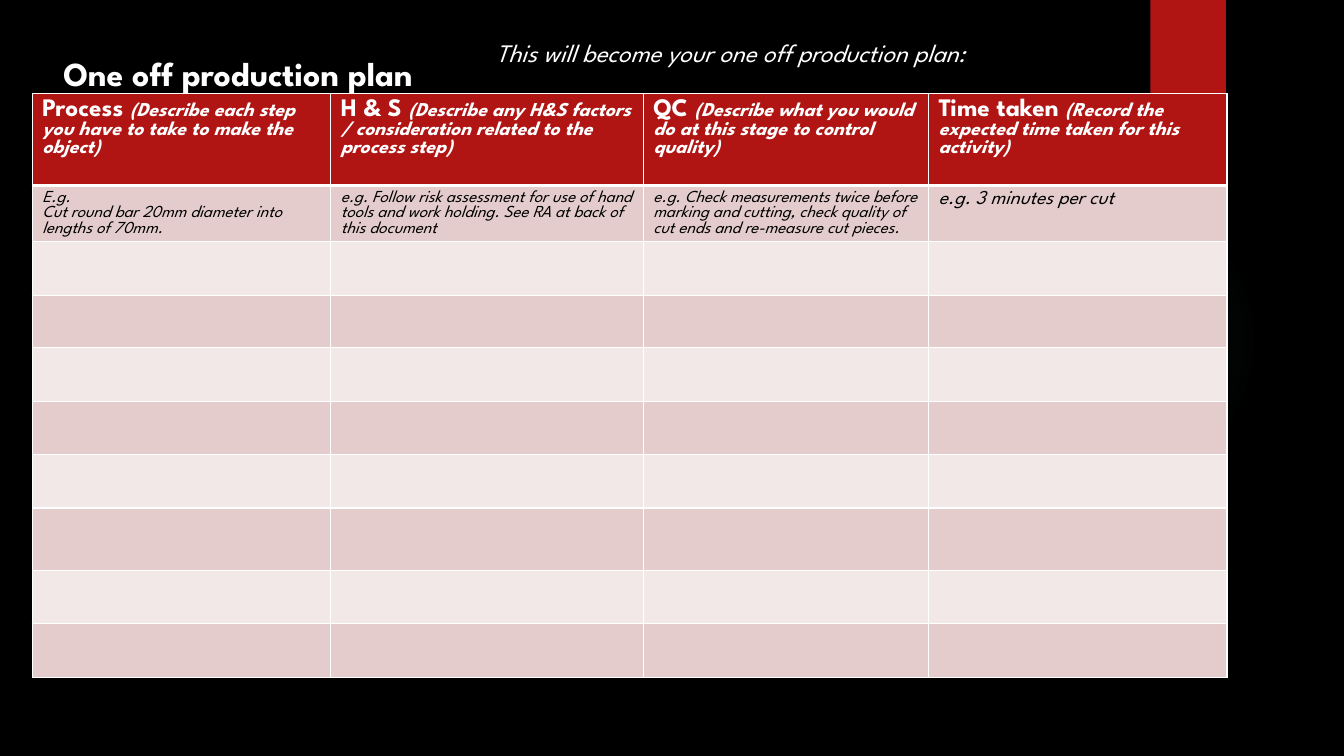
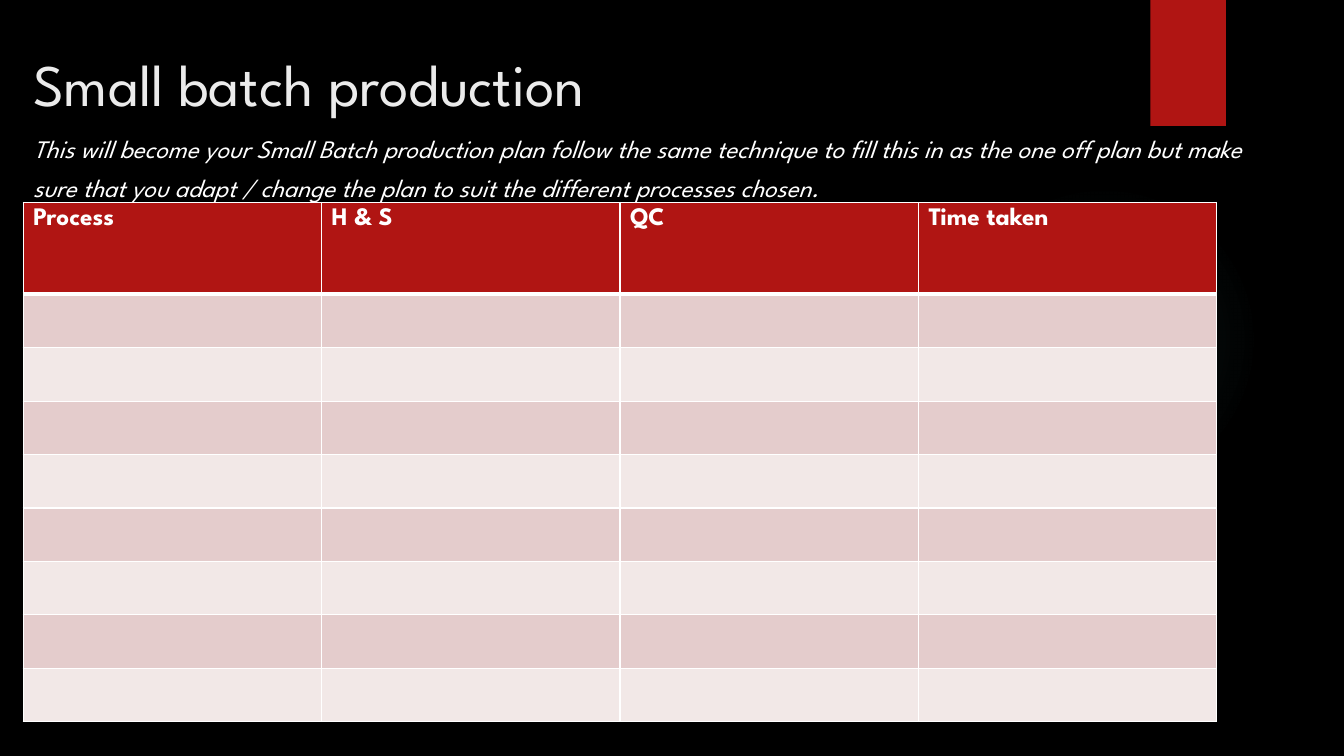
import pptx
import pptx.dml.color
import pptx.enum.shapes
import pptx.enum.text
import pptx.oxml
import pptx.oxml.ns
import pptx.util
from pptx.util import Inches

FONT = "League Spartan"
COLORS = {
    "background": "000000",
    "red": "B01513",
    "glow": "50B9C1",
    "dark_row": "E4CCCC",
    "light_row": "F2E8E7",
    "white": "FFFFFF",
    "title": "EBEBEB",
    "black": "000000",
}
NAMESPACE = pptx.oxml.ns.nsdecls("a")
GLOW_STOPS = [(0, 7), (36, 6), (69, 0)]
MIDDLE = pptx.enum.text.MSO_ANCHOR.MIDDLE
TOP = pptx.enum.text.MSO_ANCHOR.TOP

PLANS = [
    {
        "position": (0.32, 0.93),
        "columns": [2.96, 3.1, 2.83, 2.96],
        "rows": [0.91, 0.56, 0.53, 0.52, 0.53, 0.53, 0.53, 0.62, 0.53, 0.53],
        "headers": [
            ("Process ", "(Describe each step you have to take to make the object)"),
            ("H & S ", "(Describe any H&S factors / consideration related to the process step)"),
            ("QC ", "(Describe what you would do at this stage to control quality)"),
            ("Time taken ", "(Record the expected time taken for this activity)"),
        ],
        "examples": [
            ("E.g.\nCut round bar 20mm diameter into lengths of 70mm.", 12),
            ("e.g. Follow risk assessment for use of hand tools and work holding. "
             "See RA at back of this document", 12),
            ("e.g. Check measurements twice before marking and cutting, "
             "check quality of cut ends and re-measure cut pieces.", 12),
            ("e.g. 3 minutes per cut", 14),
        ],
        "texts": [
            ("One off production plan", (0.53, 0.36, 6.63, 0.5), 24, "white", True, False, 1.3, TOP),
            ("This will become your one off production plan:",
             (4.82, 0.23, 6.08, 0.71), 18, "white", False, True, 1.3, TOP),
        ],
    },
    {
        "position": (0.23, 2.01),
        "columns": [2.96] * 4,
        "rows": [0.91] + [0.53] * 8,
        "headers": [("Process",), ("H & S",), ("QC",), ("Time taken",)],
        "examples": [],
        "texts": [
            ("Small batch production", (0.23, 0.34, 7.03, 0.96), 42, "title", False, False, 1, MIDDLE),
            ("This will become your Small Batch production plan follow the same technique "
             "to fill this in as the one off plan but make sure that you adapt / change "
             "the plan to suit the different processes chosen.",
             (0.23, 1.18, 12.45, 0.71), 18, "white", False, True, 1.3, TOP),
        ],
    },
]


def color(name):
    return pptx.dml.color.RGBColor.from_string(COLORS[name])


def style(font, size, color_name, bold=False, italic=False):
    font.name = FONT
    font.size = pptx.util.Pt(size)
    font.color.rgb = color(color_name)
    font.bold = bold
    font.italic = italic


presentation = pptx.Presentation()
presentation.slide_width = Inches(13.33)
presentation.slide_height = Inches(7.5)
master_fill = presentation.slide_master.background.fill
master_fill.solid()
master_fill.fore_color.rgb = color("background")

for plan in PLANS:
    slide = presentation.slides.add_slide(presentation.slide_layouts[6])

    glow = slide.shapes.add_shape(
        pptx.enum.shapes.MSO_SHAPE.OVAL, Inches(9.41), Inches(1.83), Inches(3.08), Inches(3.08))
    glow.shadow.inherit = False
    glow.line.fill.background()
    stops = "".join(
        f'<a:gs pos="{position * 1000}"><a:srgbClr val="{COLORS["glow"]}">'
        f'<a:alpha val="{alpha * 1000}"/></a:srgbClr></a:gs>'
        for position, alpha in GLOW_STOPS)
    gradient = pptx.oxml.parse_xml(
        f'<a:gradFill {NAMESPACE}><a:gsLst>{stops}</a:gsLst><a:path path="circle">'
        '<a:fillToRect l="50000" t="50000" r="50000" b="50000"/></a:path></a:gradFill>')
    glow.element.spPr.find(pptx.oxml.ns.qn("a:prstGeom")).addnext(gradient)

    ribbon = slide.shapes.add_shape(
        pptx.enum.shapes.MSO_SHAPE.RECTANGLE, Inches(11.41), Inches(0), Inches(0.75), Inches(1.25))
    ribbon.shadow.inherit = False
    ribbon.line.fill.background()
    ribbon.fill.solid()
    ribbon.fill.fore_color.rgb = color("red")

    left, top = plan["position"]
    table = slide.shapes.add_table(
        len(plan["rows"]), len(plan["columns"]), Inches(left), Inches(top),
        Inches(sum(plan["columns"])), Inches(sum(plan["rows"]))).table
    for column, width in zip(table.columns, plan["columns"]):
        column.width = Inches(width)

    for row_index, height in enumerate(plan["rows"]):
        row = table.rows[row_index]
        row.height = Inches(height)
        fill_name = "red" if row_index == 0 else "dark_row" if row_index % 2 else "light_row"
        top_width = 3 if row_index == 1 else 1
        bottom_width = 3 if row_index == 0 else 1
        for cell in row.cells:
            properties = cell._tc.get_or_add_tcPr()
            for side, points in zip("LRTB", (1, 1, top_width, bottom_width)):
                properties.append(pptx.oxml.parse_xml(
                    f'<a:ln{side} {NAMESPACE} w="{points * 12700}"><a:solidFill>'
                    f'<a:srgbClr val="{COLORS["white"]}"/></a:solidFill></a:ln{side}>'))
            cell.fill.solid()
            cell.fill.fore_color.rgb = color(fill_name)

    for cell, parts in zip(table.rows[0].cells, plan["headers"]):
        paragraph = cell.text_frame.paragraphs[0]
        for part_index, part in enumerate(parts):
            run = paragraph.add_run()
            run.text = part
            style(run.font, 14 if part_index else 18, "white", True, part_index > 0)

    for cell, (text, size) in zip(table.rows[1].cells, plan["examples"]):
        cell.text_frame.text = text
        for paragraph in cell.text_frame.paragraphs:
            style(paragraph.runs[0].font, size, "black", italic=True)

    for text, box, size, color_name, bold, italic, spacing, anchor in plan["texts"]:
        text_frame = slide.shapes.add_textbox(*map(Inches, box)).text_frame
        text_frame.word_wrap = True
        text_frame.vertical_anchor = anchor
        text_frame.text = text
        paragraph = text_frame.paragraphs[0]
        paragraph.line_spacing = spacing
        style(paragraph.runs[0].font, size, color_name, bold, italic)

presentation.save("out.pptx")
